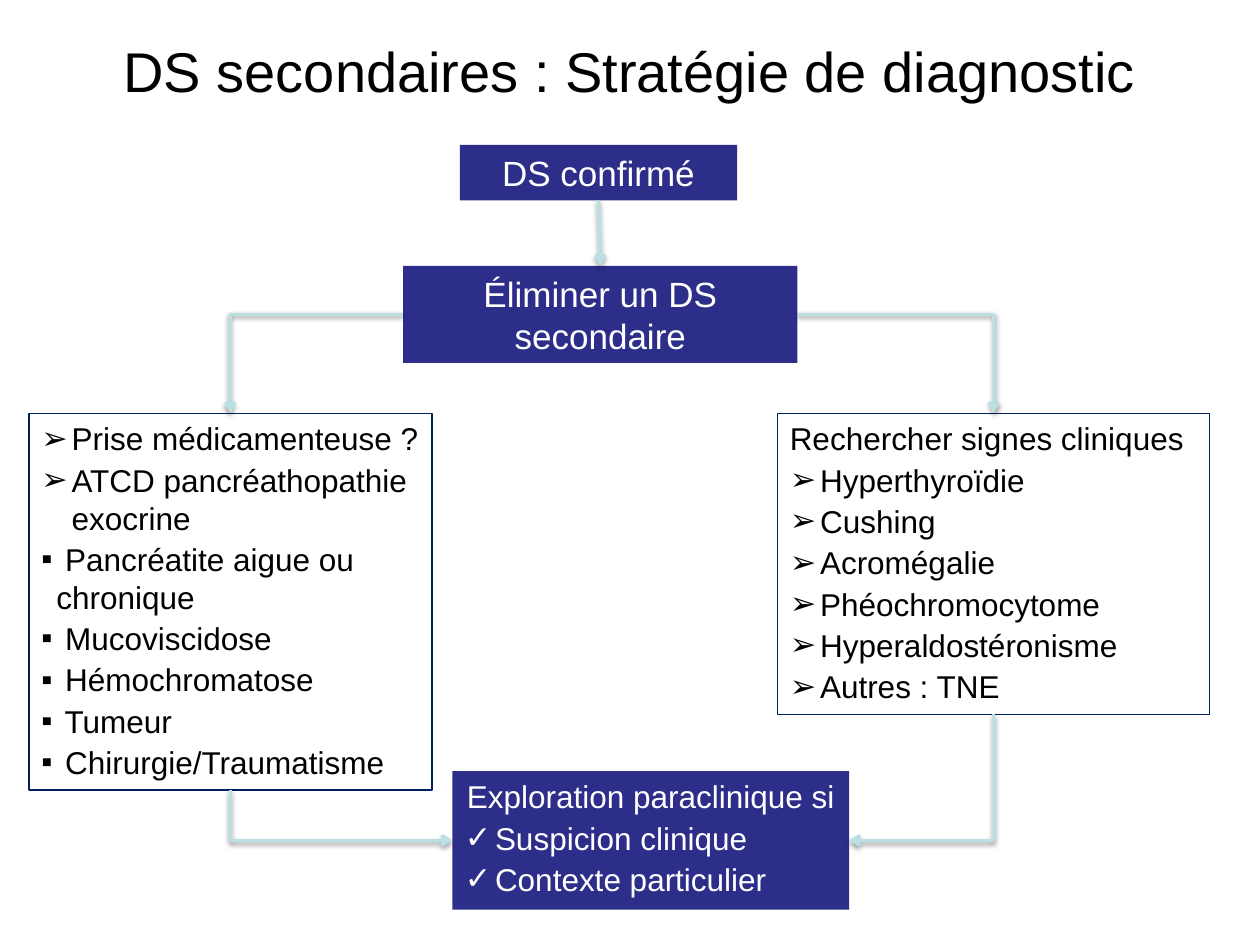
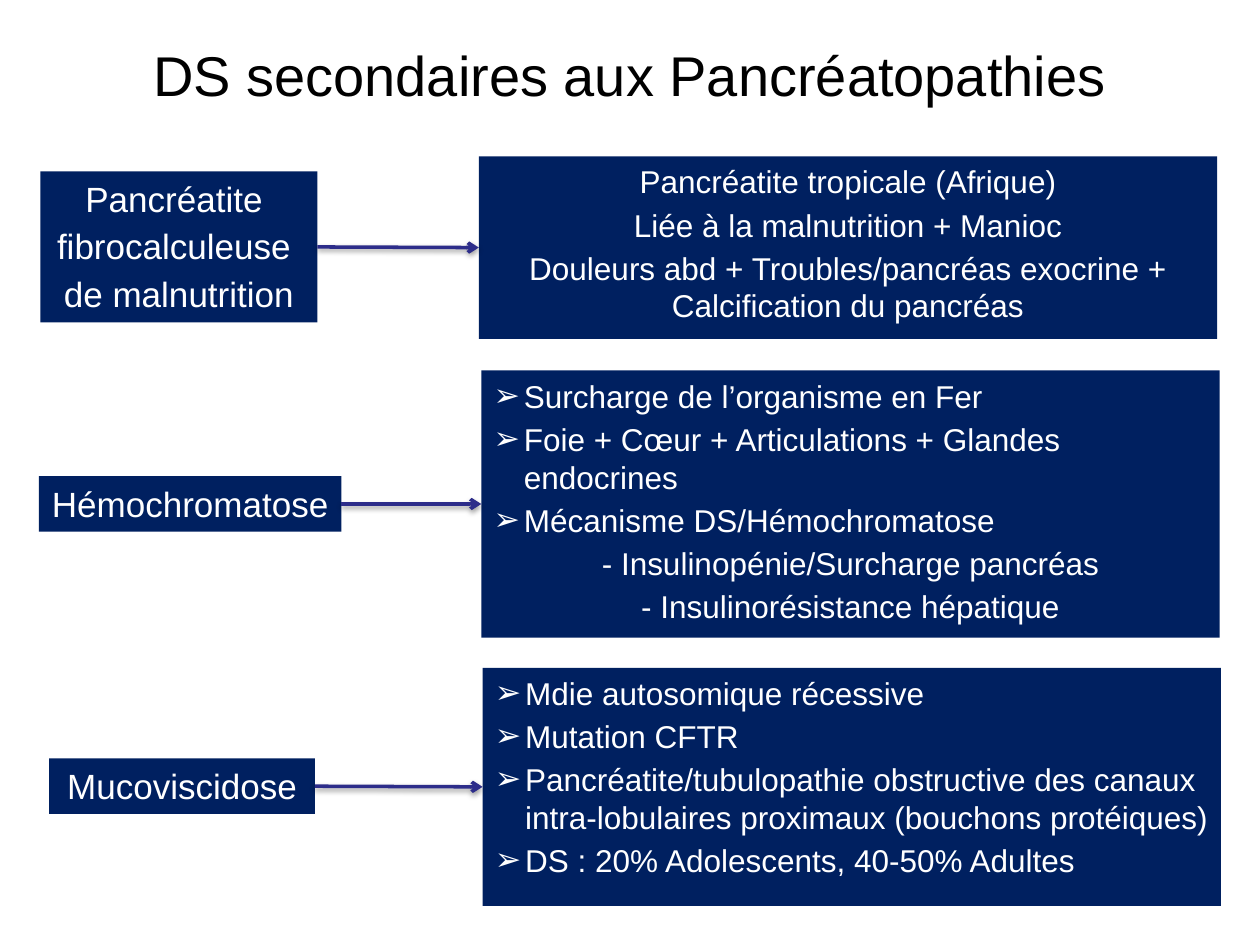
from dataclasses import dataclass
from typing import Optional

from lxml import etree
from pptx import Presentation
from pptx import util as u
from pptx.dml.color import RGBColor
from pptx.enum import shapes, text
from pptx.oxml import ns


@dataclass(frozen=True)
class Theme:
    font: str = "Arial"
    black: str = "000000"
    white: str = "FFFFFF"
    indigo: str = "2D2D8A"
    navy: str = "002060"
    pale: str = "BBE0E3"
    title: int = 32
    label: int = 20
    body: int = 18
    outline: float = 0.75
    arrow: float = 2


T = Theme()
HANGS = {"➢": 0.24, "✓": 0.24, "▪": 0.12}
TOP, LEFT, BOTTOM, RIGHT = range(4)


@dataclass(frozen=True)
class Para:
    text: str
    bullet: str = ""
    centred: bool = False


@dataclass(frozen=True)
class Box:
    key: str
    left: float
    top: float
    width: float
    height: float
    paras: list[Para]
    size: int
    fill: Optional[str] = None
    after: float = 0
    wrap: bool = True


@dataclass(frozen=True)
class Arrow:
    begin: str
    begin_site: int
    end: str
    end_site: int


def centred(*lines: str) -> list[Para]:
    return [Para(line, centred=True) for line in lines]


def bulleted(mark: str, *lines: str) -> list[Para]:
    return [Para(line, mark) for line in lines]


def add_run(p, content: str, size: int, colour: str) -> None:
    r = p.add_run()
    r.text = content
    r.font.name = T.font
    r.font.size = u.Pt(size)
    r.font.color.rgb = RGBColor.from_string(colour)


def add_bullet(p, mark: str) -> None:
    ppr = p._p.get_or_add_pPr()
    hang = u.Inches(HANGS[mark])
    ppr.set("marL", str(hang))
    ppr.set("indent", str(-hang))
    etree.SubElement(ppr, ns.qn("a:buFont")).set("typeface", T.font)
    etree.SubElement(ppr, ns.qn("a:buChar")).set("char", mark)


def add_title(s, content: str, top: float, height: float) -> None:
    sp = s.shapes.title
    sp.left, sp.top = u.Inches(0.5), u.Inches(top)
    sp.width, sp.height = u.Inches(9), u.Inches(height)
    tf = sp.text_frame
    tf.vertical_anchor = text.MSO_ANCHOR.MIDDLE
    p = tf.paragraphs[0]
    p.alignment = text.PP_ALIGN.CENTER
    add_run(p, content, T.title, T.black)


def add_box(s, box: Box):
    sp = s.shapes.add_shape(
        shapes.MSO_SHAPE.RECTANGLE,
        *(u.Inches(v) for v in (box.left, box.top, box.width, box.height)))
    sp.shadow.inherit = False
    if box.fill:
        sp.fill.solid()
        sp.fill.fore_color.rgb = RGBColor.from_string(box.fill)
        sp.line.fill.background()
    else:
        sp.fill.background()
        sp.line.color.rgb = RGBColor.from_string(T.navy)
        sp.line.width = u.Pt(T.outline)
    tf = sp.text_frame
    tf.word_wrap = box.wrap
    tf.auto_size = text.MSO_AUTO_SIZE.SHAPE_TO_FIT_TEXT
    tf.vertical_anchor = text.MSO_ANCHOR.TOP
    for i, para in enumerate(box.paras):
        p = tf.add_paragraph() if i else tf.paragraphs[0]
        p.alignment = text.PP_ALIGN.CENTER if para.centred else text.PP_ALIGN.LEFT
        p.space_after = u.Pt(box.after)
        if para.bullet:
            add_bullet(p, para.bullet)
        add_run(p, para.text, box.size, T.white if box.fill else T.black)
    return sp


def turn_vertical_first(cn) -> None:
    dx, dy = cn.end_x - cn.begin_x, cn.end_y - cn.begin_y
    mid_x, mid_y = (cn.begin_x + cn.end_x) // 2, (cn.begin_y + cn.end_y) // 2
    xfrm = cn._element.spPr.find(ns.qn("a:xfrm"))
    for flip in ("flipH", "flipV"):
        xfrm.attrib.pop(flip, None)
    cn.width, cn.height = abs(dy), abs(dx)
    cn.left, cn.top = mid_x - cn.width // 2, mid_y - cn.height // 2
    cn.rotation = 270 if dx > 0 else 90
    if dx > 0:
        xfrm.set("flipH", "1")


def add_shadow(cn) -> None:
    effects = etree.SubElement(cn._element.spPr, ns.qn("a:effectLst"))
    shadow = etree.SubElement(
        effects, ns.qn("a:outerShdw"), blurRad=str(u.Pt(3.1)),
        dist=str(u.Pt(1.6)), dir="5400000", rotWithShape="0")
    colour = etree.SubElement(shadow, ns.qn("a:srgbClr"), val=T.black)
    etree.SubElement(colour, ns.qn("a:alpha"), val="38000")


def add_arrow(s, arrow: Arrow, placed: dict, colour: str) -> None:
    bent = arrow.begin_site % 2 != arrow.end_site % 2
    kind = shapes.MSO_CONNECTOR.ELBOW if bent else shapes.MSO_CONNECTOR.STRAIGHT
    cn = s.shapes.add_connector(kind, 0, 0, 0, 0)
    cn.begin_connect(placed[arrow.begin], arrow.begin_site)
    cn.end_connect(placed[arrow.end], arrow.end_site)
    if bent:
        cn._element.spPr.find(ns.qn("a:prstGeom")).set("prst", "bentConnector2")
        if arrow.begin_site in (TOP, BOTTOM):
            turn_vertical_first(cn)
    cn.line.color.rgb = RGBColor.from_string(colour)
    cn.line.width = u.Pt(T.arrow)
    etree.SubElement(cn.line._get_or_add_ln(), ns.qn("a:tailEnd")).set("type", "arrow")
    add_shadow(cn)


def add_diagram(prs, title: str, top: float, height: float,
                boxes: list[Box], arrows: list[Arrow], colour: str) -> None:
    s = prs.slides.add_slide(prs.slide_layouts[5])
    add_title(s, title, top, height)
    placed = {box.key: add_box(s, box) for box in boxes}
    for arrow in arrows:
        add_arrow(s, arrow, placed, colour)


def add_strategy(prs) -> None:
    boxes = [
        Box("Confirmé", 3.65, 1.15, 2.2, 0.44, centred("DS confirmé"),
            T.label, T.indigo),
        Box("Éliminer", 3.2, 2.11, 3.13, 0.77, centred("Éliminer un DS secondaire"),
            T.label, T.indigo),
        Box("Antécédents", 0.23, 3.28, 3.2, 2.99,
            bulleted("➢", "Prise médicamenteuse ?", "ATCD pancréathopathie exocrine")
            + bulleted("▪", " Pancréatite aigue ou chronique", " Mucoviscidose",
                       " Hémochromatose", " Tumeur", " Chirurgie/Traumatisme"),
            T.body, after=2),
        Box("Signes", 6.17, 3.28, 3.43, 2.39,
            [Para("Rechercher signes cliniques")]
            + bulleted("➢", "Hyperthyroïdie", "Cushing", "Acromégalie",
                       "Phéochromocytome", "Hyperaldostéronisme", "Autres : TNE"),
            T.body, after=2),
        Box("Exploration", 3.59, 6.12, 3.15, 1.1,
            centred("Exploration paraclinique si")
            + bulleted("✓", "Suspicion clinique", "Contexte particulier"),
            T.body, T.indigo, 2),
    ]
    arrows = [
        Arrow("Confirmé", BOTTOM, "Éliminer", TOP),
        Arrow("Signes", BOTTOM, "Exploration", RIGHT),
        Arrow("Antécédents", BOTTOM, "Exploration", LEFT),
        Arrow("Éliminer", RIGHT, "Signes", TOP),
        Arrow("Éliminer", LEFT, "Antécédents", TOP),
    ]
    add_diagram(prs, "DS secondaires : Stratégie de diagnostic", 0.16, 0.79,
                boxes, arrows, T.pale)


def add_pancreatopathies(prs) -> None:
    def cause(key: str, left: float, top: float, width: float, height: float,
              *lines: str) -> Box:
        return Box(key, left, top, width, height, centred(*lines),
                   T.label, T.navy, 3, wrap=False)

    def detail(key: str, left: float, top: float, height: float,
               paras: list[Para]) -> Box:
        return Box(f"Détail {key}", left, top, 5.86, height, paras,
                   T.body, T.navy, 3)

    boxes = [
        cause("Mucoviscidose", 0.39, 6.02, 2.11, 0.44, "Mucoviscidose"),
        cause("Pancréatite", 0.32, 1.36, 2.2, 1.2,
              "Pancréatite ", "fibrocalculeuse ", "de malnutrition"),
        detail("Pancréatite", 3.8, 1.24, 1.45, centred(
            "Pancréatite tropicale (Afrique)",
            "Liée à la malnutrition + Manioc",
            "Douleurs abd + Troubles/pancréas exocrine + Calcification du pancréas")),
        cause("Hémochromatose", 0.31, 3.78, 2.4, 0.44, "Hémochromatose "),
        detail("Hémochromatose", 3.82, 2.94, 2.12, bulleted(
            "➢", "Surcharge de l’organisme en Fer",
            "Foie + Cœur + Articulations + Glandes endocrines",
            "Mécanisme DS/Hémochromatose")
            + centred("- Insulinopénie/Surcharge pancréas",
                      "- Insulinorésistance hépatique")),
        detail("Mucoviscidose", 3.83, 5.3, 1.89, bulleted(
            "➢", "Mdie autosomique récessive", "Mutation CFTR",
            "Pancréatite/tubulopathie obstructive des canaux "
            "intra-lobulaires proximaux (bouchons protéiques)",
            "DS : 20% Adolescents, 40-50% Adultes")),
    ]
    arrows = [Arrow(key, RIGHT, f"Détail {key}", LEFT)
              for key in ("Pancréatite", "Hémochromatose", "Mucoviscidose")]
    add_diagram(prs, "DS secondaires aux Pancréatopathies", 0.23, 0.71,
                boxes, arrows, T.indigo)


def main() -> None:
    prs = Presentation()
    prs.slide_width, prs.slide_height = u.Inches(10), u.Inches(7.5)
    add_strategy(prs)
    add_pancreatopathies(prs)
    prs.save("out.pptx")


if __name__ == "__main__":
    main()
